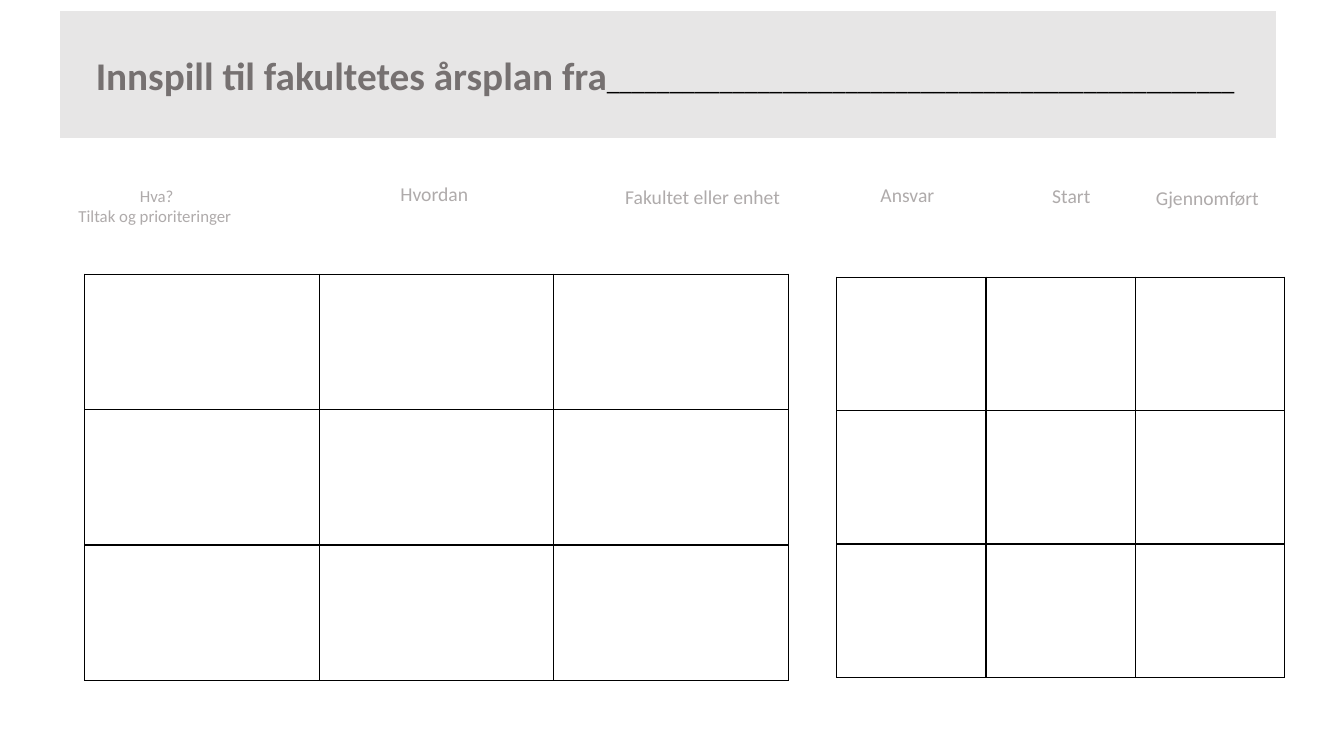
from lxml.etree import SubElement
from pptx import Presentation
from pptx.dml.color import RGBColor
from pptx.enum.shapes import MSO_SHAPE
from pptx.enum.text import MSO_ANCHOR, MSO_AUTO_SIZE, PP_ALIGN
from pptx.oxml import parse_xml
from pptx.oxml.ns import nsdecls, qn
from pptx.util import Inches, Pt

COLORS = {"white": "FFFFFF", "banner": "E7E6E6", "title": "767171",
          "label": "AFABAB", "black": "000000"}
FONT = "Calibri"

TITLE = "Innspill til fakultetes årsplan fra"
BLANK_LINE = "_" * 50 + " "
TITLE_PLACE = (0.59, 0.1, 12.07, 1.28)

# lines of text, size, (left, top, width, height)
LABELS = [
    (["Hva?", "Tiltak og prioriteringer "], 12, (-0.21, 1.81, 3.53, 0.47)),
    (["Hvordan "], 14, (3, 1.7, 2.66, 0.44)),
    (["Ansvar"], 14, (7.93, 1.71, 2.14, 0.44)),
    (["Fakultet eller enhet"], 14, (5.64, 1.73, 2.66, 0.44)),
    (["Start"], 14, (9.73, 1.72, 1.79, 0.44)),
    (["Gjennomført"], 14, (11.08, 1.74, 1.79, 0.44)),
]
GRID_PLACES = [(0.84, 2.72, 6.98, 4.03), (8.3, 2.75, 4.44, 3.97)]
GRID_SIZE = 3


def color(name):
    return RGBColor.from_string(COLORS[name])


def add_text(para, text, *, size, ink, bold=False):
    span = para.add_run()
    span.text = text
    span.font.name = FONT
    span.font.size = Pt(size)
    span.font.bold = bold
    span.font.color.rgb = color(ink)


def format_box(box, fill):
    box.fill.solid()
    box.fill.fore_color.rgb = color(fill)
    box.line.color.rgb = color("white")
    box.line.width = Pt(1)
    frame = box.text_frame
    frame.word_wrap = True
    frame.auto_size = MSO_AUTO_SIZE.NONE
    frame.vertical_anchor = MSO_ANCHOR.MIDDLE


def add_title(page):
    """Turn the title placeholder into the rounded banner."""
    title = page.shapes.title
    title.left, title.top, title.width, title.height = map(Inches, TITLE_PLACE)
    title.element.spPr.insert(1, parse_xml(
        f'<a:prstGeom {nsdecls("a")} prst="roundRect"><a:avLst/></a:prstGeom>'))
    format_box(title, "banner")
    para = title.text_frame.paragraphs[0]
    para.alignment = PP_ALIGN.CENTER
    add_text(para, TITLE, size=28, ink="title", bold=True)
    add_text(para, BLANK_LINE, size=18, ink="black")


def add_label(page, lines, size, place):
    box = page.shapes.add_shape(MSO_SHAPE.RECTANGLE, *map(Inches, place))
    box.shadow.inherit = False
    format_box(box, "white")
    frame = box.text_frame
    for number, line in enumerate(lines):
        para = frame.add_paragraph() if number else frame.paragraphs[0]
        para.alignment = PP_ALIGN.CENTER
        add_text(para, line, size=size, ink="label")


def add_borders(cell):
    properties = cell._tc.get_or_add_tcPr()
    for position, side in enumerate(("lnL", "lnR", "lnT", "lnB")):
        border = parse_xml(f'<a:{side} {nsdecls("a")} w="{Pt(1)}"/>')
        fill = SubElement(border, qn("a:solidFill"))
        SubElement(fill, qn("a:srgbClr"), val=COLORS["black"])
        properties.insert(position, border)


def add_grid(page, place):
    left, top, width, height = map(Inches, place)
    table = page.shapes.add_table(GRID_SIZE, GRID_SIZE, left, top, width, height).table
    table.first_row = False
    table.horz_banding = False
    for column in table.columns:
        column.width = width // GRID_SIZE
    for row in table.rows:
        row.height = height // GRID_SIZE
    for cell in table.iter_cells():
        cell.fill.background()
        add_borders(cell)


def main():
    deck = Presentation()
    deck.slide_width, deck.slide_height = Inches(13.33), Inches(7.5)
    page = deck.slides.add_slide(deck.slide_layouts.get_by_name("Title Only"))
    add_title(page)
    for label in LABELS:
        add_label(page, *label)
    for place in GRID_PLACES:
        add_grid(page, place)
    deck.save("out.pptx")


if __name__ == "__main__":
    main()
